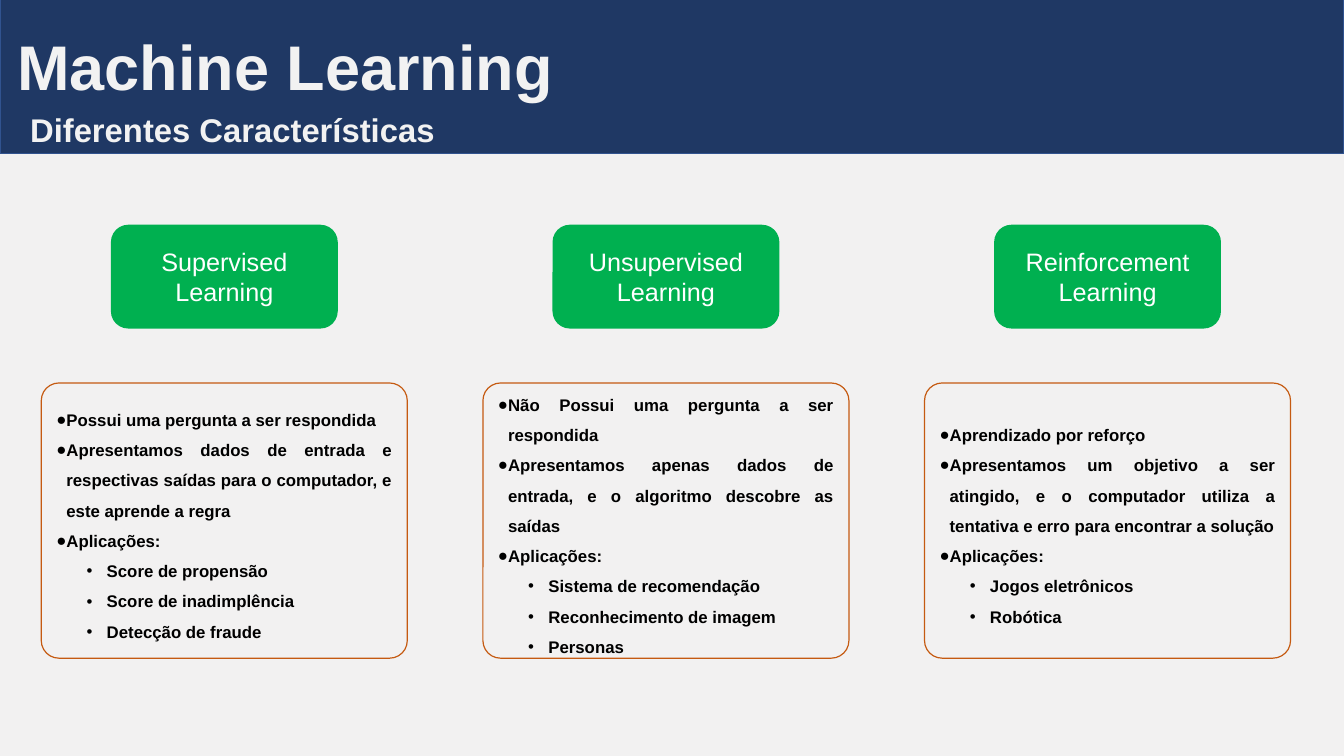
from dataclasses import dataclass

from lxml.etree import SubElement
from pptx import Presentation
from pptx.dml.color import RGBColor
from pptx.enum.shapes import MSO_SHAPE
from pptx.enum.text import MSO_ANCHOR, MSO_AUTO_SIZE, PP_ALIGN
from pptx.oxml.ns import qn
from pptx.util import Inches, Pt


@dataclass(frozen=True)
class Theme:
    font: str = "Arial"
    back: str = "F2F1F1"
    navy: str = "1F3864"
    edge: str = "31538F"
    light: str = "F2F2F2"
    white: str = "FFFFFF"
    green: str = "00B050"
    orange: str = "C55A11"
    black: str = "000000"
    title: float = 45
    subtitle: float = 23.4
    label: float = 18
    body: float = 12
    line: float = 0.85


@dataclass(frozen=True)
class Grid:
    left: float = 0.41
    pitch: float = 4.38
    width: float = 3.63
    label_top: float = 2.23
    label_width: float = 2.25
    label_height: float = 1.03
    card_top: float = 3.8
    card_height: float = 2.73

    def label(self, col):
        inset = (self.width - self.label_width) / 2
        return (self.left + col * self.pitch + inset, self.label_top,
                self.label_width, self.label_height)

    def card(self, col):
        return self.left + col * self.pitch, self.card_top, self.width, self.card_height


class Deck:
    def __init__(self, prs, theme):
        self.theme = theme
        self.s = prs.slides.add_slide(prs.slide_layouts[5])
        fill = self.s.background.fill
        fill.solid()
        fill.fore_color.rgb = RGBColor.from_string(theme.back)

    def font(self, p, size, color, bold=False):
        f = p.font
        f.name, f.size, f.bold = self.theme.font, Pt(size), bold
        f.color.rgb = RGBColor.from_string(color)

    def shape(self, kind, box, fill=None, line=None, radius=None):
        sp = self.s.shapes.add_shape(kind, *map(Inches, box))
        sp.shadow.inherit = False
        if radius is not None:
            sp.adjustments[0] = radius
        if fill:
            sp.fill.solid()
            sp.fill.fore_color.rgb = RGBColor.from_string(fill)
        else:
            sp.fill.background()
        if line:
            sp.line.color.rgb = RGBColor.from_string(line)
            sp.line.width = Pt(self.theme.line)
        else:
            sp.line.fill.background()
        return sp

    def band(self, box):
        sp = self.shape(MSO_SHAPE.RECTANGLE, box, self.theme.navy, self.theme.edge)
        self.s.shapes.title.element.addprevious(sp.element)

    def heading(self, sp, text, box, size):
        sp.left, sp.top, sp.width, sp.height = map(Inches, box)
        tf = sp.text_frame
        tf.text = text
        tf.word_wrap = True
        tf.auto_size = MSO_AUTO_SIZE.NONE
        tf.vertical_anchor = MSO_ANCHOR.BOTTOM
        p = tf.paragraphs[0]
        p.alignment = PP_ALIGN.LEFT
        p.line_spacing = 0.9
        self.font(p, size, self.theme.light, True)

    def title(self, text, box):
        self.heading(self.s.shapes.title, text, box, self.theme.title)

    def subtitle(self, text, box):
        sp = self.s.shapes.add_textbox(0, 0, 0, 0)
        self.heading(sp, text, box, self.theme.subtitle)

    def label(self, text, box):
        sp = self.shape(MSO_SHAPE.ROUNDED_RECTANGLE, box, self.theme.green, radius=0.167)
        tf = sp.text_frame
        tf.text = text
        tf.vertical_anchor = MSO_ANCHOR.MIDDLE
        p = tf.paragraphs[0]
        p.alignment = PP_ALIGN.CENTER
        self.font(p, self.theme.label, self.theme.white)

    def bullet(self, p, char, margin, indent):
        pr = p._p.get_or_add_pPr()
        pr.set("marL", str(Inches(margin)))
        pr.set("indent", str(Inches(indent)))
        color = SubElement(pr, qn("a:buClr"))
        SubElement(color, qn("a:srgbClr"), val=self.theme.black)
        SubElement(pr, qn("a:buFont"), typeface=self.theme.font)
        SubElement(pr, qn("a:buChar"), char=char)

    def card(self, points, uses, box):
        sp = self.shape(MSO_SHAPE.ROUNDED_RECTANGLE, box, line=self.theme.orange, radius=0.064)
        tf = sp.text_frame
        tf.vertical_anchor = MSO_ANCHOR.MIDDLE
        items = [(text, 0) for text in (*points, "Aplicações:")]
        items += [(text, 1) for text in uses]
        for i, (text, level) in enumerate(items):
            p = tf.add_paragraph() if i else tf.paragraphs[0]
            p.text = text
            p.level = level
            p.alignment = PP_ALIGN.JUSTIFY
            p.line_spacing = 1.5
            self.font(p, self.theme.body, self.theme.black, True)
            if level:
                self.bullet(p, "•", 0.5, -0.2)
            else:
                self.bullet(p, "●", 0.1, -0.18)


COLUMNS = [
    ("Supervised Learning",
     ["Possui uma pergunta a ser respondida",
      "Apresentamos dados de entrada e respectivas saídas para o computador, "
      "e este aprende a regra"],
     ["Score de propensão", "Score de inadimplência", "Detecção de fraude"]),
    ("Unsupervised Learning",
     ["Não Possui uma pergunta a ser respondida",
      "Apresentamos apenas dados de entrada, e o algoritmo descobre as saídas"],
     ["Sistema de recomendação", "Reconhecimento de imagem", "Personas"]),
    ("Reinforcement Learning",
     ["Aprendizado por reforço",
      "Apresentamos um objetivo a ser atingido, e o computador utiliza a "
      "tentativa e erro para encontrar a solução"],
     ["Jogos eletrônicos", "Robótica"]),
]


def main():
    prs = Presentation()
    prs.slide_width, prs.slide_height = Inches(13.33), Inches(7.5)
    deck, grid = Deck(prs, Theme()), Grid()
    deck.band((0, -0.02, 13.33, 1.54))
    deck.title("Machine Learning", (0.07, 0.26, 9.46, 0.82))
    deck.subtitle("Diferentes Características", (0.2, 0.97, 5.61, 0.56))
    for col, (name, points, uses) in enumerate(COLUMNS):
        deck.label(name, grid.label(col))
        deck.card(points, uses, grid.card(col))
    prs.save("out.pptx")


if __name__ == "__main__":
    main()
